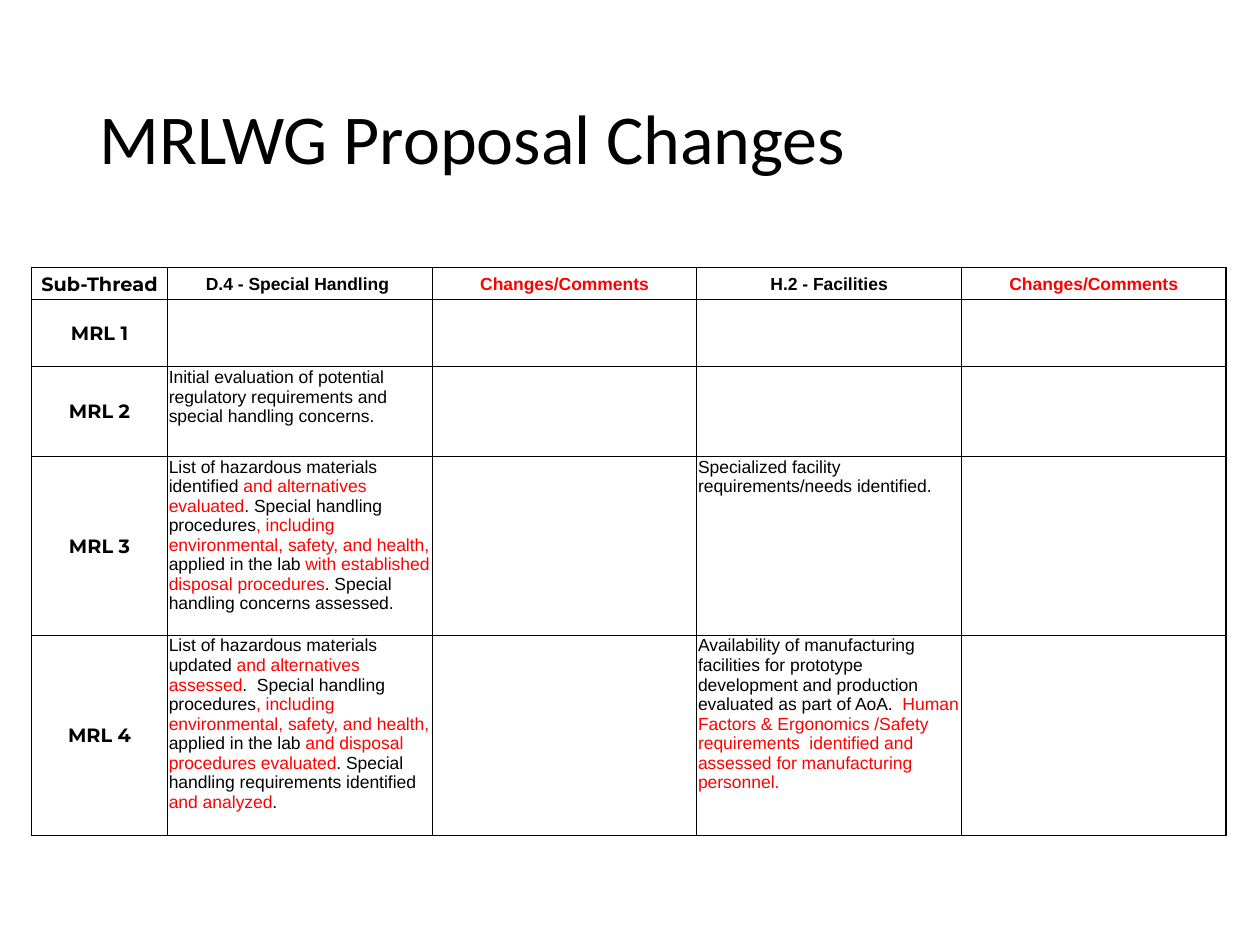
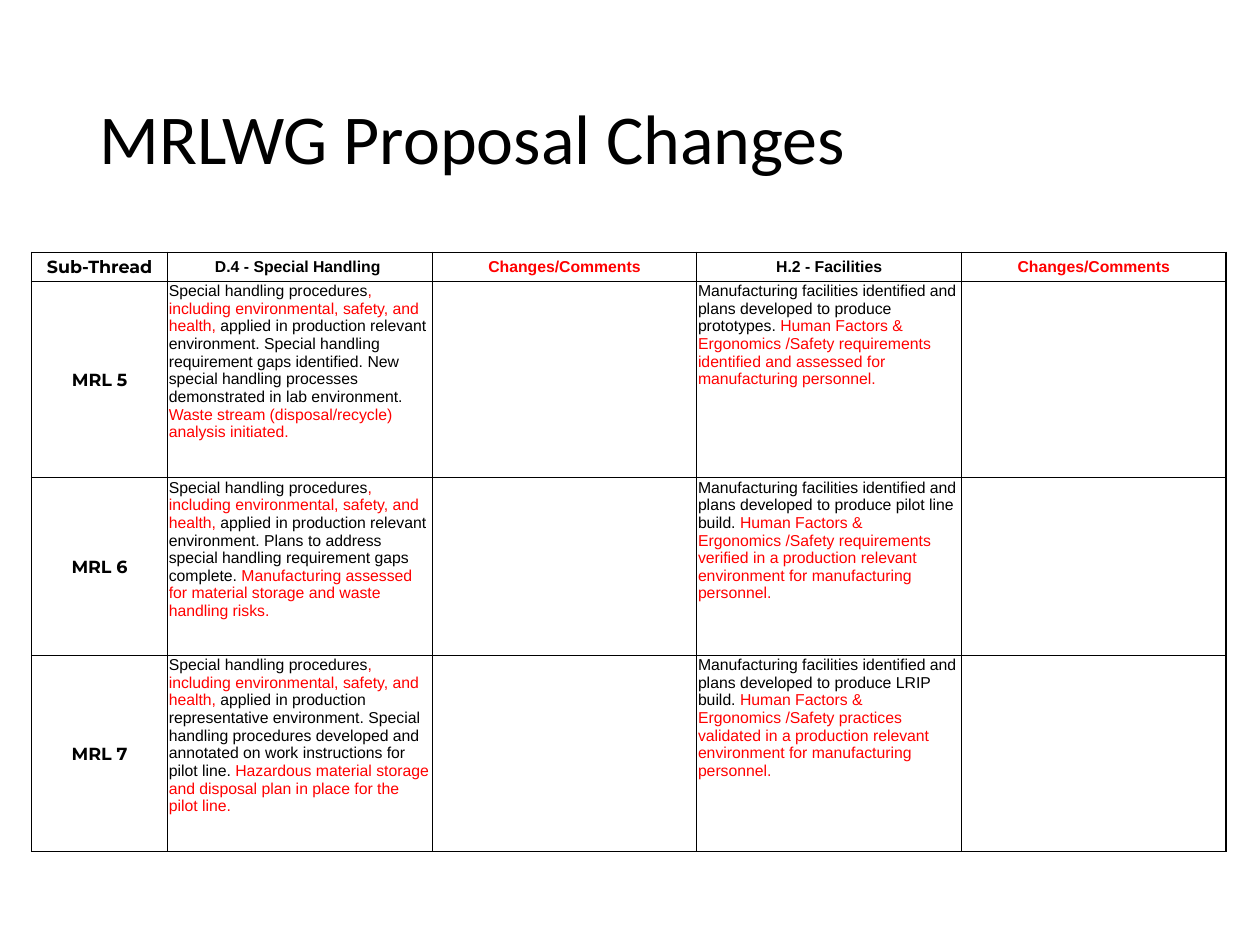
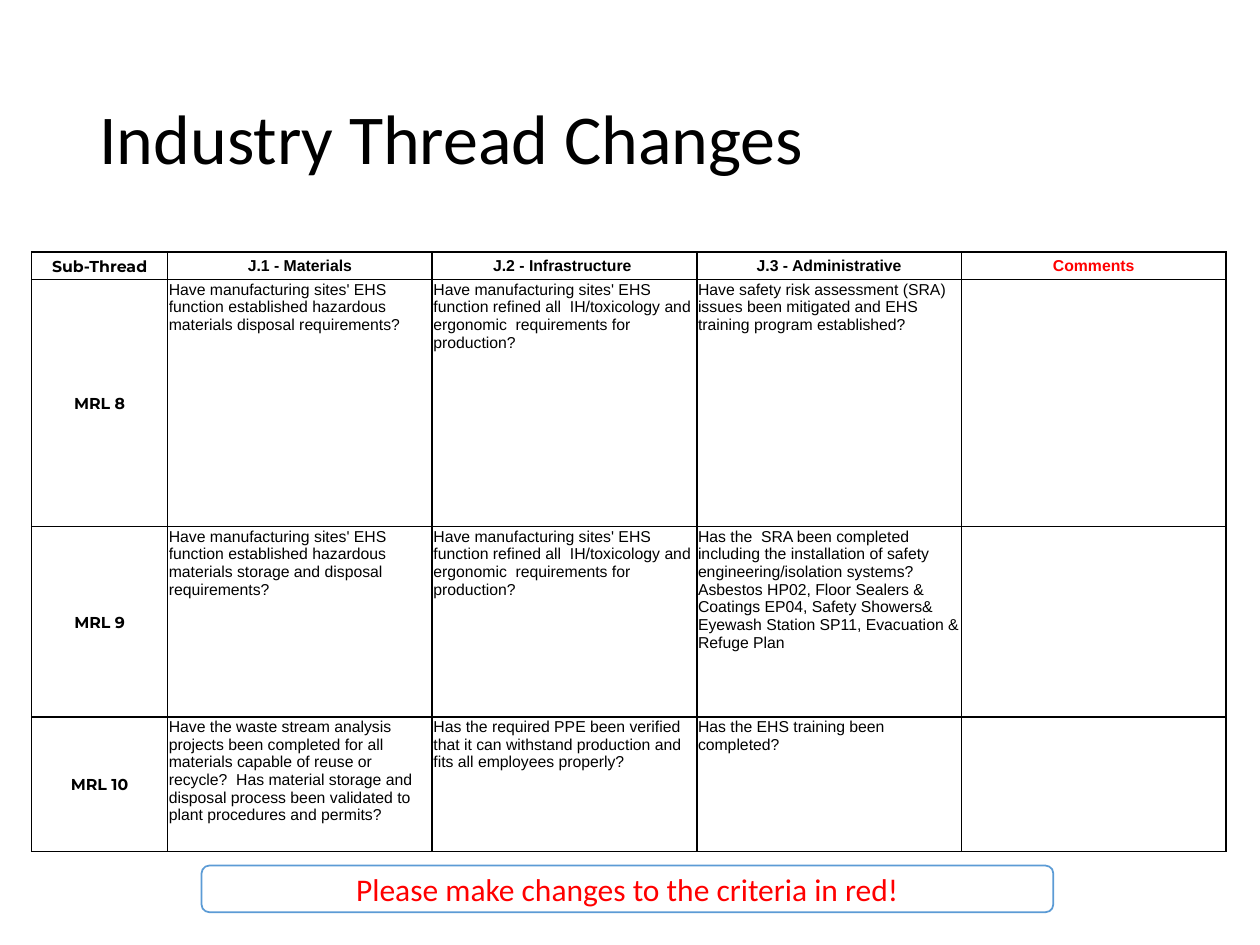
"""Build three slides of manufacturing readiness level criteria tables."""
from dataclasses import dataclass

import pptx
import pptx.dml.color
import pptx.enum.shapes
import pptx.enum.text
import pptx.oxml
import pptx.oxml.ns
import pptx.util

EMU_PER_PX = 9144
BLACK, RED, WHITE, BLUE = "000000", "FF0000", "FFFFFF", "5B9BD5"
TITLE_FONT, LEVEL_FONT, BODY_FONT = "Calibri", "Montserrat", "Arial"
COLUMN_WIDTHS = (108, 210, 210, 210, 210)
TABLE_LEFT = 25
MIDDLE = pptx.enum.text.MSO_ANCHOR.MIDDLE
TOP = pptx.enum.text.MSO_ANCHOR.TOP
CENTER = pptx.enum.text.PP_ALIGN.CENTER
LEFT = pptx.enum.text.PP_ALIGN.LEFT

SAFETY = "|, including environmental, safety, and health,|"
PROCEDURES = f"Special handling procedures{SAFETY} applied in production"
FACILITIES = "Manufacturing facilities identified and plans developed to produce"
HUMAN_FACTORS = "|Human Factors & Ergonomics /Safety"
ASSESSED = f"{HUMAN_FACTORS} requirements  identified and assessed for manufacturing personnel."
RELEVANT = "in a production relevant environment for manufacturing personnel."
SITES = "Have manufacturing sites' EHS function"
REFINED = f"{SITES} refined all  IH/toxicology and ergonomic  requirements for production?"
PROPOSAL_HEADER = ("Sub-Thread", "D.4 - Special Handling ", "|Changes/Comments",
                   "H.2 - Facilities", "|Changes/Comments")


@dataclass(frozen=True)
class CriteriaRow:
    """One table row; text between bars is red."""
    height: int
    texts: tuple[str, ...]


@dataclass(frozen=True)
class CriteriaSlide:
    """One titled criteria table with its sizes and heavy column edges."""
    title: str
    top: int
    level_size: int
    body_size: int
    rows: tuple[CriteriaRow, ...]
    heavy_edges: tuple[int, ...] = (0, 1, 5)
    row_line: float = 0.5
    banner: str = ""


SLIDES = (
    CriteriaSlide("MRLWG Proposal Changes", 212, 11, 10, (
        CriteriaRow(26, PROPOSAL_HEADER),
        CriteriaRow(53, ("MRL 1", "", "", "", "")),
        CriteriaRow(71, (
            "MRL 2",
            "Initial evaluation of potential regulatory requirements and special "
            "handling concerns.", "", "", "")),
        CriteriaRow(142, (
            "MRL 3",
            "List of hazardous materials identified| and alternatives evaluated|. Special "
            f"handling procedures{SAFETY} applied in the lab |with established disposal "
            "procedures|. Special handling concerns assessed.", "",
            "Specialized facility requirements/needs identified.", "")),
        CriteriaRow(159, (
            "MRL 4",
            "List of hazardous materials updated| and alternatives assessed|.  Special "
            f"handling procedures{SAFETY} applied in the lab| and disposal procedures "
            "evaluated|. Special handling requirements identified| and analyzed|.", "",
            "Availability of manufacturing facilities for prototype development and "
            f"production evaluated as part of AoA.  {ASSESSED}", "")),
    )),
    CriteriaSlide("MRLWG Proposal Changes", 200, 10, 9, (
        CriteriaRow(23, PROPOSAL_HEADER),
        CriteriaRow(156, (
            "MRL 5",
            f"{PROCEDURES} relevant environment. Special handling requirement gaps "
            "identified. New special handling processes demonstrated in lab environment. "
            "|Waste stream (disposal/recycle) analysis initiated.", "",
            f"{FACILITIES} prototypes. {ASSESSED}", "")),
        CriteriaRow(141, (
            "MRL 6",
            f"{PROCEDURES} relevant environment. Plans to address special handling "
            "requirement gaps complete. |Manufacturing assessed for material storage and "
            "waste handling risks.", "",
            f"{FACILITIES} pilot line build. {HUMAN_FACTORS} requirements verified {RELEVANT}",
            "")),
        CriteriaRow(156, (
            "MRL 7",
            f"{PROCEDURES} representative environment. Special handling procedures developed "
            "and annotated on work instructions for pilot line. |Hazardous material storage "
            "and disposal plan in place for the pilot line.", "",
            f"{FACILITIES} LRIP build. {HUMAN_FACTORS} practices validated {RELEVANT}", "")),
    )),
    CriteriaSlide("Industry Thread Changes", 200, 9, 9, (
        CriteriaRow(22, ("Sub-Thread", "J.1 - Materials", "J.2 - Infrastructure ",
                         "J.3 - Administrative", "|Comments")),
        CriteriaRow(196, (
            "MRL 8", f"{SITES} established hazardous materials disposal requirements?", REFINED,
            "Have safety risk assessment (SRA) issues been mitigated and EHS training program "
            "established?", "")),
        CriteriaRow(151, (
            "MRL 9",
            f"{SITES} established hazardous materials storage and disposal requirements?",
            REFINED,
            "Has the  SRA been completed including the installation of safety "
            "engineering/isolation systems?\nAsbestos HP02, Floor Sealers & Coatings EP04, "
            "Safety Showers& Eyewash Station SP11, Evacuation & Refuge Plan", "")),
        CriteriaRow(107, (
            "MRL 10",
            "Have the waste stream analysis projects been completed for all materials capable "
            "of reuse or recycle?  Has material storage and disposal process been validated to "
            "plant procedures and permits?",
            "Has the required PPE been verified that it can withstand production and fits all "
            "employees properly?",
            "Has the EHS training been completed?", "")),
    ), heavy_edges=tuple(range(6)), row_line=1,
        banner="|Please make changes to the criteria in red!"),
)


def px(length: int) -> pptx.util.Emu:
    """Convert px to EMU."""
    return pptx.util.Emu(length * EMU_PER_PX)


def color(value: str) -> pptx.dml.color.RGBColor:
    """Convert a hex string to a colour."""
    return pptx.dml.color.RGBColor.from_string(value)


def write_text(text_frame, text: str, *, font: str, size: int, bold: bool = False,
               align=LEFT, line_spacing: float = 1.0) -> None:
    """Write one paragraph, with every second bar-separated part in red."""
    text_frame.word_wrap = True
    paragraph = text_frame.paragraphs[0]
    paragraph.alignment = align
    paragraph.line_spacing = line_spacing
    for part_index, part in enumerate(text.split("|")):
        for line_index, line in enumerate(part.split("\n")):
            if line_index:
                paragraph.add_line_break()
            if not line:
                continue
            run = paragraph.add_run()
            run.text = line
            run.font.name = font
            run.font.size = pptx.util.Pt(size)
            run.font.bold = bold
            run.font.color.rgb = color(RED if part_index % 2 else BLACK)


def set_borders(cell, left: float, right: float, row_line: float) -> None:
    """Draw the four black cell edges with widths in points."""
    properties = cell._tc.get_or_add_tcPr()
    for side, width in (("L", left), ("R", right), ("T", row_line), ("B", row_line)):
        properties.append(pptx.oxml.parse_xml(
            f'<a:ln{side} {pptx.oxml.ns.nsdecls("a")} w="{pptx.util.Pt(width)}">'
            f'<a:solidFill><a:srgbClr val="{BLACK}"/></a:solidFill></a:ln{side}>'))


def add_title(slide, text: str) -> None:
    """Add the slide title."""
    shape = slide.shapes.add_textbox(px(69), px(40), px(862), px(145))
    shape.text_frame.vertical_anchor = MIDDLE
    write_text(shape.text_frame, text, font=TITLE_FONT, size=40, line_spacing=0.9)


def add_criteria_table(slide, content: CriteriaSlide) -> None:
    """Add the table of readiness levels."""
    frame = slide.shapes.add_table(
        len(content.rows), len(COLUMN_WIDTHS), px(TABLE_LEFT), px(content.top),
        px(sum(COLUMN_WIDTHS)), px(sum(row.height for row in content.rows)))
    table = frame.table
    table.first_row = table.horz_banding = False
    for column, width in zip(table.columns, COLUMN_WIDTHS):
        column.width = px(width)
    edges = [1 if edge in content.heavy_edges else 0.5
             for edge in range(len(COLUMN_WIDTHS) + 1)]
    for row_index, row in enumerate(content.rows):
        table.rows[row_index].height = px(row.height)
        for column_index, text in enumerate(row.texts):
            cell = table.cell(row_index, column_index)
            is_level = column_index == 0
            is_label = is_level or row_index == 0
            cell.margin_left = cell.margin_right = cell.margin_top = px(1)
            cell.margin_bottom = 0
            cell.vertical_anchor = MIDDLE if is_label else TOP
            set_borders(cell, edges[column_index], edges[column_index + 1], content.row_line)
            cell.fill.background()
            write_text(cell.text_frame, text,
                       font=LEVEL_FONT if is_level else BODY_FONT,
                       size=content.level_size if is_level else content.body_size,
                       bold=is_label, align=CENTER if is_label else LEFT)


def add_banner(slide, text: str) -> None:
    """Add the rounded request below the table."""
    shape = slide.shapes.add_shape(pptx.enum.shapes.MSO_SHAPE.ROUNDED_RECTANGLE,
                                   px(160), px(687), px(676), px(37))
    shape.shadow.inherit = False
    shape.fill.solid()
    shape.fill.fore_color.rgb = color(WHITE)
    shape.line.color.rgb = color(BLUE)
    shape.line.width = pptx.util.Pt(1)
    shape.text_frame.vertical_anchor = MIDDLE
    write_text(shape.text_frame, text, font=TITLE_FONT, size=18, align=CENTER)


def main() -> None:
    """Build and save the presentation."""
    presentation = pptx.Presentation()
    presentation.slide_width, presentation.slide_height = px(1000), px(750)
    for content in SLIDES:
        slide = presentation.slides.add_slide(presentation.slide_layouts[6])
        add_title(slide, content.title)
        add_criteria_table(slide, content)
        if content.banner:
            add_banner(slide, content.banner)
    presentation.save("out.pptx")


if __name__ == "__main__":
    main()
